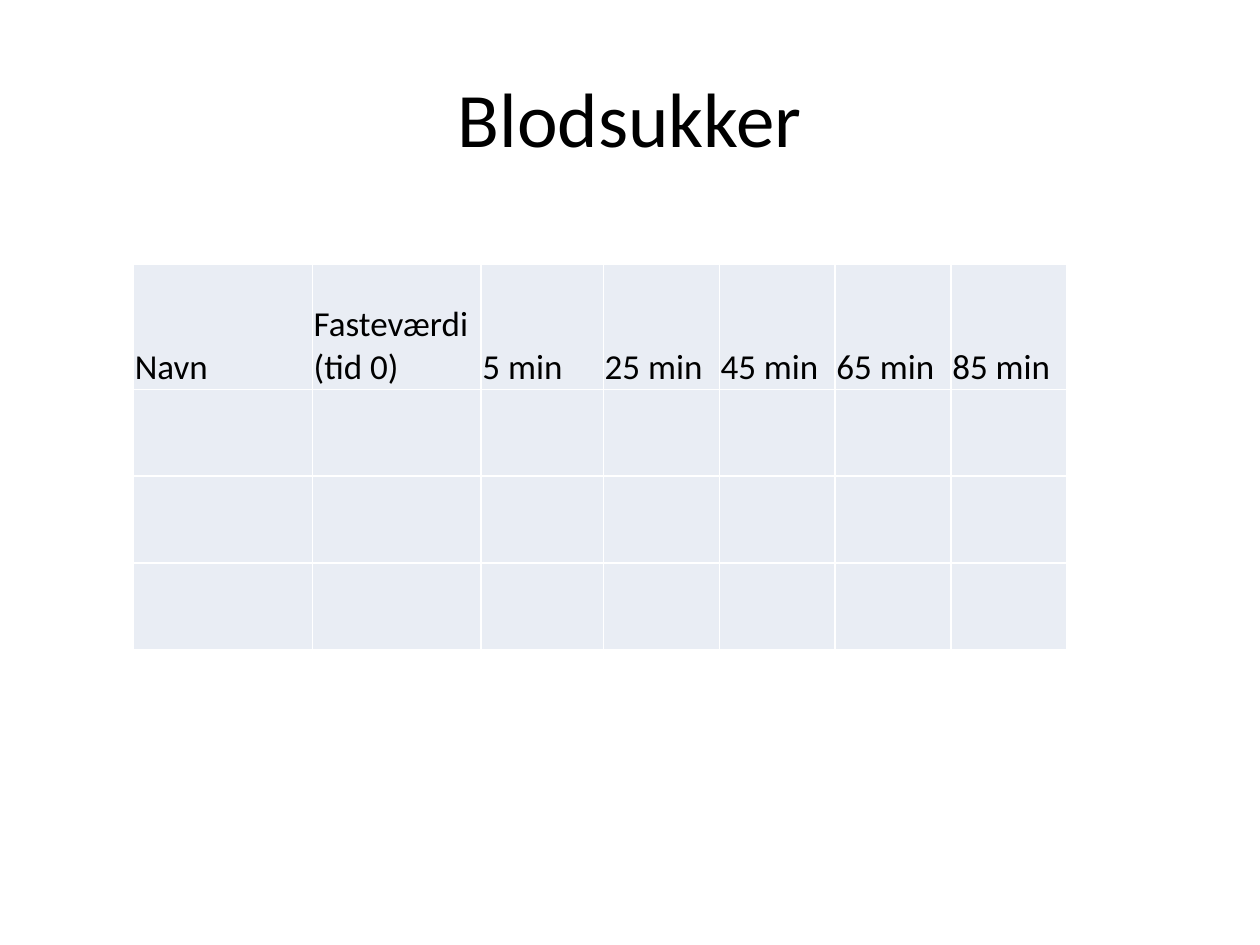
from dataclasses import dataclass

import pptx
import pptx.dml.color
import pptx.enum.text
import pptx.oxml
import pptx.oxml.ns
import pptx.util
from pptx.util import Inches


@dataclass(frozen=True)
class Theme:
    font: str = "Calibri"
    ink: str = "000000"
    cell: str = "E9EDF4"
    border: str = "FFFFFF"
    border_width: int = 1
    title_size: int = 44
    table_size: int = 20


THEME = Theme()
HEADINGS = ["Navn", "Fasteværdi (tid 0)"] + [f"{minute} min" for minute in (5, 25, 45, 65, 85)]
COLUMN_WIDTHS = [1.42, 1.34, 0.97] + [0.92] * 4
ROW_HEIGHTS = [0.99] + [0.69] * 3


def write_text(frame, text, *, size, color=THEME.ink, align=None, anchor=None):
    frame.word_wrap = True
    if anchor is not None:
        frame.vertical_anchor = anchor
    para = frame.paragraphs[0]
    para.alignment = align
    span = para.add_run()
    span.text = text
    span.font.name = THEME.font
    span.font.size = pptx.util.Pt(size)
    span.font.color.rgb = pptx.dml.color.RGBColor.from_string(color)


def add_title(page, text):
    title = page.shapes.title
    title.left, title.top = Inches(0.5), Inches(0.3)
    title.width, title.height = Inches(9), Inches(1.25)
    write_text(title.text_frame, text, size=THEME.title_size,
               align=pptx.enum.text.PP_ALIGN.CENTER,
               anchor=pptx.enum.text.MSO_ANCHOR.MIDDLE)


def style_cell(cell):
    """Draw the four borders first, because the schema puts them before the fill."""
    properties = cell._tc.get_or_add_tcPr()
    width = pptx.util.Pt(THEME.border_width)
    for side in "LRTB":
        properties.append(pptx.oxml.parse_xml(
            f'<a:ln{side} {pptx.oxml.ns.nsdecls("a")} w="{width}"><a:solidFill>'
            f'<a:srgbClr val="{THEME.border}"/></a:solidFill></a:ln{side}>'))
    cell.fill.solid()
    cell.fill.fore_color.rgb = pptx.dml.color.RGBColor.from_string(THEME.cell)
    cell.margin_left = cell.margin_right = cell.margin_top = Inches(0.01)
    cell.margin_bottom = 0
    cell.vertical_anchor = pptx.enum.text.MSO_ANCHOR.BOTTOM


def add_measurement_table(page):
    table = page.shapes.add_table(
        len(ROW_HEIGHTS), len(COLUMN_WIDTHS), Inches(1.06), Inches(2.1),
        Inches(sum(COLUMN_WIDTHS)), Inches(sum(ROW_HEIGHTS))).table
    table.first_row = table.horz_banding = False
    for column, width in zip(table.columns, COLUMN_WIDTHS):
        column.width = Inches(width)
    for row, height in zip(table.rows, ROW_HEIGHTS):
        row.height = Inches(height)
    for cell in table.iter_cells():
        style_cell(cell)
    for cell, heading in zip(table.rows[0].cells, HEADINGS):
        write_text(cell.text_frame, heading, size=THEME.table_size)


def main():
    deck = pptx.Presentation()
    deck.slide_width, deck.slide_height = Inches(10), Inches(7.5)
    page = deck.slides.add_slide(deck.slide_layouts.get_by_name("Title Only"))
    add_title(page, "Blodsukker")
    add_measurement_table(page)
    deck.save("out.pptx")


if __name__ == "__main__":
    main()
